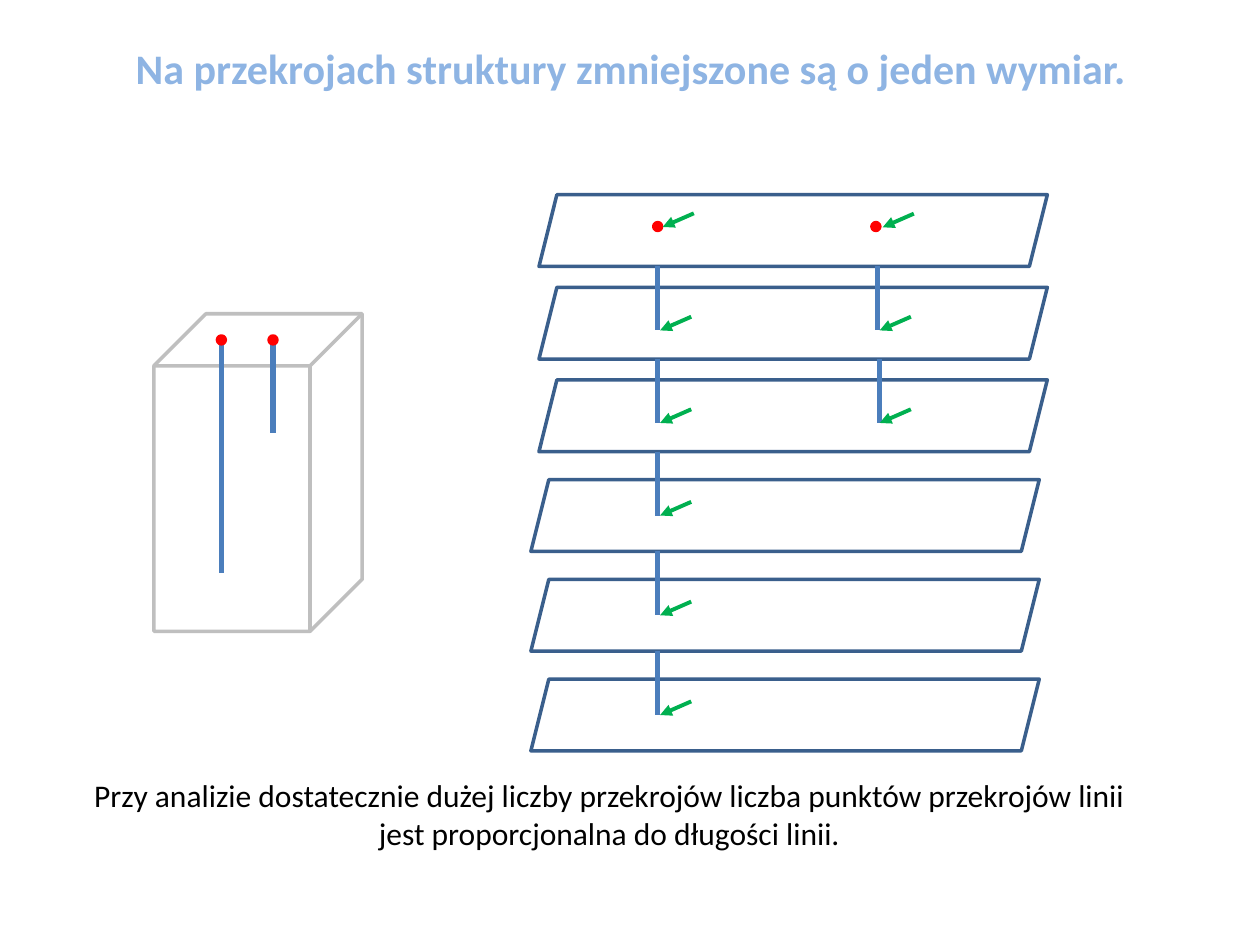
from lxml.etree import SubElement
from pptx import Presentation
from pptx.dml.color import RGBColor
from pptx.enum.shapes import MSO_CONNECTOR, MSO_SHAPE
from pptx.enum.text import MSO_AUTO_SIZE, PP_ALIGN
from pptx.oxml.ns import qn
from pptx.util import Pt

COLORS = {
    "title": "8EB4E3", "text": "000000", "section": "3A5F8C",
    "fibre": "4B7EBC", "point": "FF0000", "arrow": "00B050", "cube": "BFBFBF",
}

deck = Presentation()
deck.slide_width, deck.slide_height = Pt(720), Pt(540)
page = deck.slides.add_slide(deck.slide_layouts[6])


def add_outline(preset, left, top, width, height, color, filled=False):
    shape = page.shapes.add_shape(preset, Pt(left), Pt(top), Pt(width), Pt(height))
    shape.shadow.inherit = False
    shape.line.width = Pt(2)
    shape.line.color.rgb = RGBColor.from_string(COLORS[color])
    if filled:
        shape.fill.solid()
        shape.fill.fore_color.rgb = RGBColor.from_string(COLORS[color])
    else:
        shape.fill.background()


def add_line(x1, y1, x2, y2, color, width, arrowhead=False):
    line = page.shapes.add_connector(
        MSO_CONNECTOR.STRAIGHT, Pt(x1), Pt(y1), Pt(x2), Pt(y2))
    line.line.width = Pt(width)
    line.line.color.rgb = RGBColor.from_string(COLORS[color])
    if arrowhead:
        SubElement(line.line._get_or_add_ln(), qn("a:tailEnd"), type="triangle")
    SubElement(line._element.spPr, qn("a:effectLst"))


# Title and conclusion: text, left, top, width, height, alignment, font
texts = [
    ("Na przekrojach struktury zmniejszone są o jeden wymiar.",
     70.5, 21, 607, 36, PP_ALIGN.LEFT,
     {"name": "Calibri", "size": Pt(24), "bold": True}, "title"),
    ("Przy analizie dostatecznie dużej liczby przekrojów liczba punktów "
     "przekrojów linii jest proporcjonalna do długości linii.",
     36.5, 440, 623.5, 51, PP_ALIGN.CENTER,
     {"name": "Calibri", "size": Pt(18), "bold": False}, "text"),
]
for words, left, top, width, height, alignment, font, color in texts:
    box = page.shapes.add_textbox(Pt(left), Pt(top), Pt(width), Pt(height))
    box.text_frame.word_wrap = True
    box.text_frame.auto_size = MSO_AUTO_SIZE.SHAPE_TO_FIT_TEXT
    para = box.text_frame.paragraphs[0]
    para.alignment = alignment
    span = para.add_run()
    span.text = words
    for name, value in font.items():
        setattr(span.font, name, value)
    span.font.color.rgb = RGBColor.from_string(COLORS[color])

# Block with two fibres of different length
POINT = 4.5
add_outline(MSO_SHAPE.CUBE, 88, 179.3, 119, 181.5, "cube")
for x, bottom in [(126.5, 327.5), (156, 247.5)]:
    add_line(x, 194.5, x, bottom, "fibre", 3)
    add_outline(MSO_SHAPE.OVAL, x - POINT / 2, 192, POINT, POINT, "point", True)

# Stack of sections
SECTION_WIDTH, SECTION_HEIGHT = 290.5, 41
sections = [(308, 111.3), (308, 164.2), (308, 217.1),
            (303.4, 274.1), (303.4, 331.1), (303.4, 388.1)]
for left, top in sections:
    add_outline(MSO_SHAPE.PARALLELOGRAM, left, top,
                SECTION_WIDTH, SECTION_HEIGHT, "section")

# Each fibre runs from under one section into the next; an arrow marks its end
FIBRE_LENGTH = 36.5
ARROW_DX, ARROW_DY = 17.8, 7.8
tips = [(378.7, 129.7), (504.4, 129.9)]
for fibre_xs, tip_x in [([375.8] * 5, 377.2), ([501.3, 502.7], 502.7)]:
    for x, (left, top) in zip(fibre_xs, sections):
        start = top + SECTION_HEIGHT
        add_line(x, start, x, start + FIBRE_LENGTH, "fibre", 3)
        tips.append((tip_x, start + FIBRE_LENGTH))

for x in (375.8, 500.5):
    add_outline(MSO_SHAPE.OVAL, x - POINT / 2, 127.2, POINT, POINT, "point", True)
for x, y in tips:
    add_line(x + ARROW_DX, y - ARROW_DY, x, y, "arrow", 2.25, arrowhead=True)

deck.save("out.pptx")
